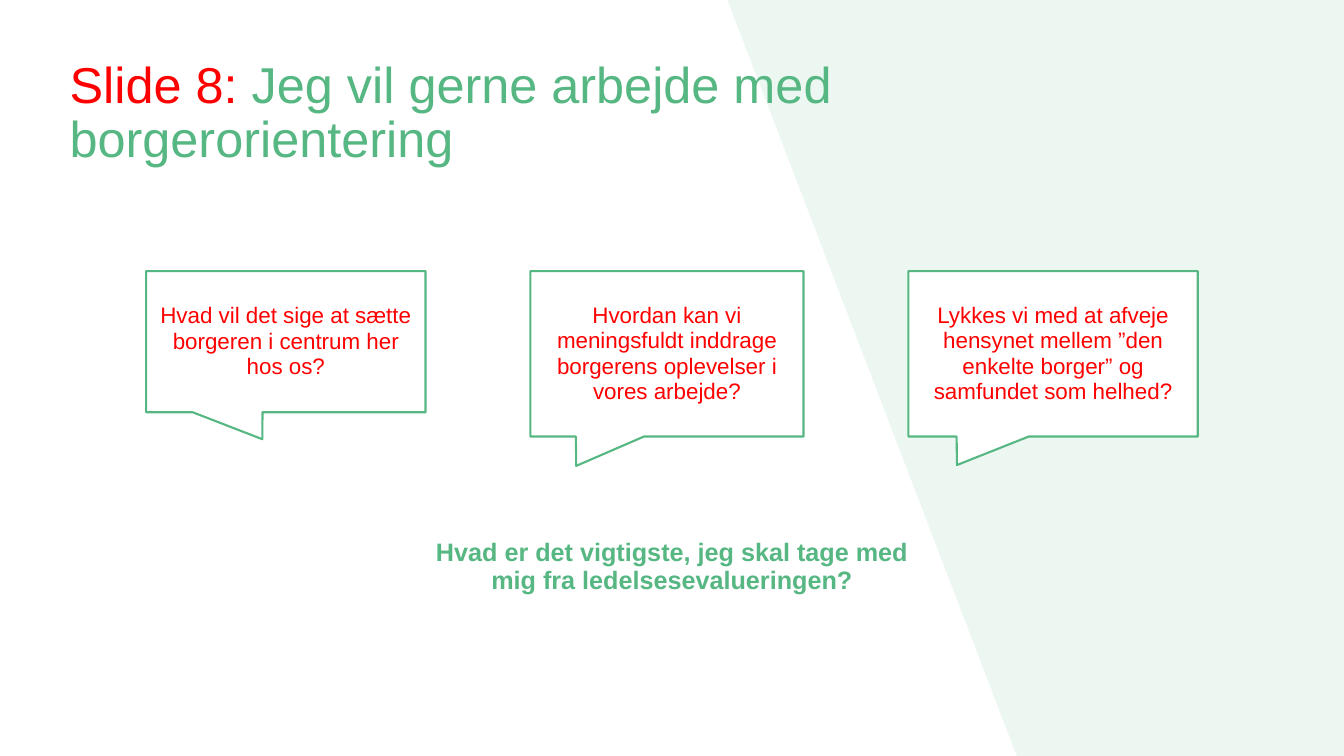
from pptx import Presentation
from pptx.dml.color import RGBColor
from pptx.enum.shapes import MSO_SHAPE as Shape
from pptx.enum.text import MSO_ANCHOR as Anchor, MSO_AUTO_SIZE as Fit, PP_ALIGN as Align
from pptx.oxml.ns import qn
from pptx.util import Inches, Pt
from lxml import etree

GREEN = RGBColor(0x56, 0xB7, 0x83)
RED = RGBColor(0xFF, 0x00, 0x00)
WHITE = RGBColor(0xFF, 0xFF, 0xFF)


def add_run(para, text, size, color, bold=False):
    run = para.add_run()
    run.text = text
    run.font.name = "Arial"
    run.font.size = Pt(size)
    run.font.bold = bold
    run.font.color.rgb = color


deck = Presentation()
deck.slide_width = Inches(13.33)
deck.slide_height = Inches(7.5)
slide = deck.slides.add_slide(deck.slide_layouts[5])
shapes = slide.shapes

edge = [(10.1, 7.54), (13.34, 7.54), (13.34, -0.04)]
pen = shapes.build_freeform(Inches(7.2), Inches(-0.04))
pen.add_line_segments([(Inches(x), Inches(y)) for x, y in edge], close=True)
panel = pen.convert_to_shape()
panel.shadow.inherit = False
panel.fill.solid()
panel.fill.fore_color.rgb = GREEN
panel.line.fill.background()
tint = panel.fill._xPr.find(qn("a:solidFill"))[0]
etree.SubElement(tint, qn("a:alpha")).set("val", "10000")

title = shapes.title
title.left, title.top = Inches(0.59), Inches(0.58)
title.width, title.height = Inches(9.7), Inches(1.11)
title.element.addprevious(panel.element)
frame = title.text_frame
frame.auto_size = Fit.NONE
frame.word_wrap = True
frame.vertical_anchor = Anchor.MIDDLE
para = frame.paragraphs[0]
para.alignment = Align.LEFT
para.line_spacing = 0.9
add_run(para, "Slide 8: ", 36, RED)
add_run(para, "Jeg vil gerne arbejde med borgerorientering", 36, GREEN)

asks = [
    (1.45, 2.77, 1.4, -0.084, 0.691,
     "Hvad vil det sige at sætte borgeren i centrum her hos os?"),
    (5.26, 2.71, 1.64, -0.332, 0.678,
     "Hvordan kan vi meningsfuldt inddrage borgerens oplevelser i vores arbejde?"),
    (9.01, 2.87, 1.64, -0.332, 0.673,
     "Lykkes vi med at afveje hensynet mellem ”den enkelte borger” og samfundet som helhed?"),
]
for left, width, height, tip_x, tip_y, text in asks:
    bubble = shapes.add_shape(Shape.RECTANGULAR_CALLOUT, Inches(left), Inches(2.69),
                              Inches(width), Inches(height))
    bubble.adjustments[0] = tip_x
    bubble.adjustments[1] = tip_y
    bubble.shadow.inherit = False
    bubble.fill.solid()
    bubble.fill.fore_color.rgb = WHITE
    bubble.line.color.rgb = GREEN
    bubble.line.width = Pt(1.5)
    frame = bubble.text_frame
    frame.word_wrap = True
    frame.vertical_anchor = Anchor.MIDDLE
    para = frame.paragraphs[0]
    para.alignment = Align.CENTER
    para.line_spacing = 0.95
    add_run(para, text, 16, RED)

close = shapes.add_textbox(Inches(4.2), Inches(5.29), Inches(4.93), Inches(0.68))
frame = close.text_frame
frame.word_wrap = True
para = frame.paragraphs[0]
para.alignment = Align.CENTER
para.line_spacing = 0.95
add_run(para, "Hvad er det vigtigste, jeg skal tage med mig fra ledelsesevalueringen?",
        18, GREEN, True)

deck.save("out.pptx")
